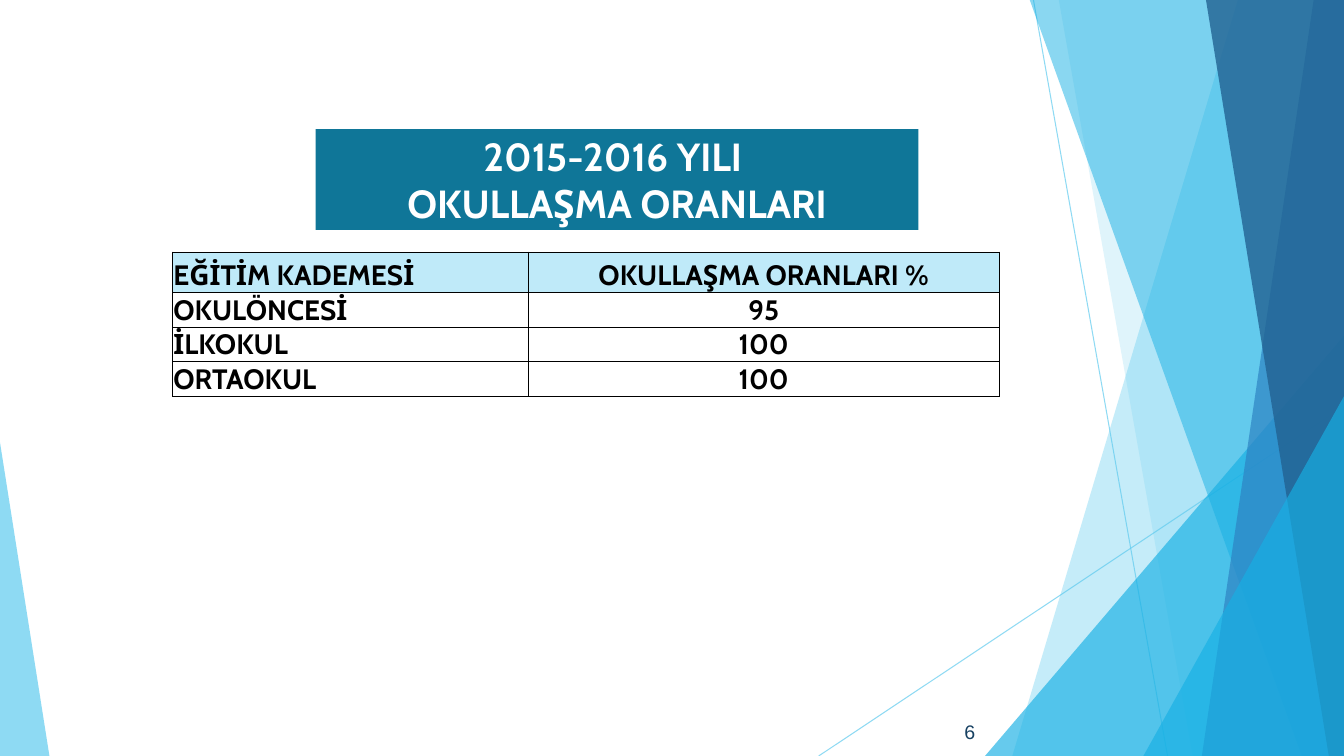
"""Build the slide on schooling rates for 2015-2016."""
from dataclasses import dataclass

from lxml import etree
from pptx import Presentation
from pptx.dml.color import RGBColor
from pptx.enum.shapes import MSO_CONNECTOR, MSO_SHAPE
from pptx.enum.text import MSO_ANCHOR, MSO_AUTO_SIZE, PP_ALIGN
from pptx.oxml.ns import qn
from pptx.util import Inches, Pt

LEFT, CENTER, RIGHT = PP_ALIGN.LEFT, PP_ALIGN.CENTER, PP_ALIGN.RIGHT
MIDDLE, BOTTOM = MSO_ANCHOR.MIDDLE, MSO_ANCHOR.BOTTOM
NO_FIT = MSO_AUTO_SIZE.NONE
STRAIGHT, TRIANGLE = MSO_CONNECTOR.STRAIGHT, MSO_SHAPE.ISOSCELES_TRIANGLE

TITLE = ["2015-2016 YILI ", "OKULLAŞMA ORANLARI"]
ROWS = [
    ("EĞİTİM KADEMESİ", "OKULLAŞMA ORANLARI %"),
    ("OKULÖNCESİ", "95"),
    ("İLKOKUL", "100"),
    ("ORTAOKUL", "100"),
]
NUMBER = "6"


@dataclass(frozen=True)
class Theme:
    """Colours, fonts and type sizes."""
    sky: str = "5FCBEF"
    cyan: str = "17B0E4"
    blue: str = "2E83C3"
    navy: str = "226292"
    teal: str = "0F7698"
    pale: str = "BFEAF9"
    ink: str = "174162"
    black: str = "000000"
    white: str = "FFFFFF"
    font: str = "Cabin"
    plain: str = "Arial"
    title: int = 28
    body: int = 20
    small: int = 14


THEME = Theme()
WIDE, HIGH = 13.33, 7.5
RAYS = [((10.25, 0), (11.58, HIGH)), ((WIDE, 4.03), (8.12, HIGH))]
BANDS_LOW = [
    (12.28, 10.04, THEME.sky, 36),
    (10.5, 11.83, THEME.sky, 20),
]
BANDS_TOP = [
    (10.21, 12.91, THEME.cyan, 50),
    (13.03, 11.92, THEME.blue, 70),
    (11.96, 13.18, THEME.navy, 80),
]
PEAK_LOW = (9.77, 3.33, 3.56, 1, THEME.cyan, 66)
PEAKS_TOP = [
    (11.34, 3.93, 1.99, 1, THEME.cyan, 66),
    (0, 4.39, 0.49, 0, THEME.sky, 70),
]
COLS = [3.53, 4.67]
TALL = [0.4, 0.3, 0.3, 0.3]


def box(*sides):
    return [Inches(side) for side in sides]


def rgb(code):
    return RGBColor.from_string(code)


def fade(shape, alpha):
    for color in shape.element.spPr.iter(qn("a:srgbClr")):
        etree.SubElement(color, qn("a:alpha"), val=str(alpha * 1000))


def paint(shape, color, alpha):
    shape.shadow.inherit = False
    shape.fill.solid()
    shape.fill.fore_color.rgb = rgb(color)
    shape.line.fill.background()
    fade(shape, alpha)


def add_ray(slide, start, end):
    ray = slide.shapes.add_connector(STRAIGHT, *box(*start, *end))
    ray.line.color.rgb = rgb(THEME.sky)
    ray.line.width = Pt(0.75)
    fade(ray, 70)
    etree.SubElement(ray.element.spPr, qn("a:effectLst"))


def add_band(slide, top, foot, color, alpha):
    form = slide.shapes.build_freeform(*box(top, -0.01))
    corners = [(WIDE, -0.01), (WIDE, HIGH), (foot, HIGH)]
    form.add_line_segments([box(*corner) for corner in corners])
    paint(form.convert_to_shape(), color, alpha)


def add_peak(slide, left, top, width, apex, color, alpha):
    sides = box(left, top, width, HIGH - top)
    peak = slide.shapes.add_shape(TRIANGLE, *sides)
    peak.adjustments[0] = apex
    paint(peak, color, alpha)


def add_facets(slide):
    for start, end in RAYS:
        add_ray(slide, start, end)
    for band in BANDS_LOW:
        add_band(slide, *band)
    add_peak(slide, *PEAK_LOW)
    for band in BANDS_TOP:
        add_band(slide, *band)
    for peak in PEAKS_TOP:
        add_peak(slide, *peak)


def write(frame, lines, align, size, color, font=THEME.font, bold=True):
    frame.text = "\n".join(lines)
    for para in frame.paragraphs:
        para.alignment = align
        para.font.name = font
        para.font.size = Pt(size)
        para.font.bold = bold
        para.font.color.rgb = rgb(color)


def add_title(slide):
    title = slide.shapes.title
    title.left, title.top, title.width, title.height = box(3.13, 1.28, 5.98, 1)
    title.fill.solid()
    title.fill.fore_color.rgb = rgb(THEME.teal)
    frame = title.text_frame
    frame.auto_size = NO_FIT
    frame.vertical_anchor = MIDDLE
    write(frame, TITLE, CENTER, THEME.title, THEME.white)


def add_number(slide):
    frame = slide.shapes.add_textbox(*box(9.02, 7.02, 0.75, 0.48)).text_frame
    frame.word_wrap = True
    frame.vertical_anchor = MIDDLE
    write(frame, [NUMBER], RIGHT, THEME.small, THEME.ink, THEME.plain, False)


def rule(cell):
    props = cell._tc.get_or_add_tcPr()
    for side in ("lnL", "lnR", "lnT", "lnB"):
        line = etree.SubElement(props, qn("a:" + side), w=str(Pt(0.5)))
        fill = etree.SubElement(line, qn("a:solidFill"))
        etree.SubElement(fill, qn("a:srgbClr"), val=THEME.black)


def add_rates(slide):
    sides = box(1.71, 2.5, sum(COLS), sum(TALL))
    table = slide.shapes.add_table(len(ROWS), len(COLS), *sides).table
    table.first_row = table.horz_banding = False
    for col, width in zip(table.columns, COLS):
        col.width = Inches(width)
    for row, height in zip(table.rows, TALL):
        row.height = Inches(height)
    for r, texts in enumerate(ROWS):
        for c, text in enumerate(texts):
            cell = table.cell(r, c)
            rule(cell)
            if r == 0:
                cell.fill.solid()
                cell.fill.fore_color.rgb = rgb(THEME.pale)
            else:
                cell.fill.background()
            cell.margin_left = cell.margin_right = cell.margin_top = Inches(0.01)
            cell.margin_bottom = 0
            cell.vertical_anchor = BOTTOM
            align = CENTER if c else LEFT
            write(cell.text_frame, [text], align, THEME.body, THEME.black)


def main():
    deck = Presentation()
    deck.slide_width, deck.slide_height = box(WIDE, HIGH)
    slide = deck.slides.add_slide(deck.slide_layouts[5])
    add_facets(slide)
    add_number(slide)
    add_title(slide)
    add_rates(slide)
    deck.save("out.pptx")


if __name__ == "__main__":
    main()
